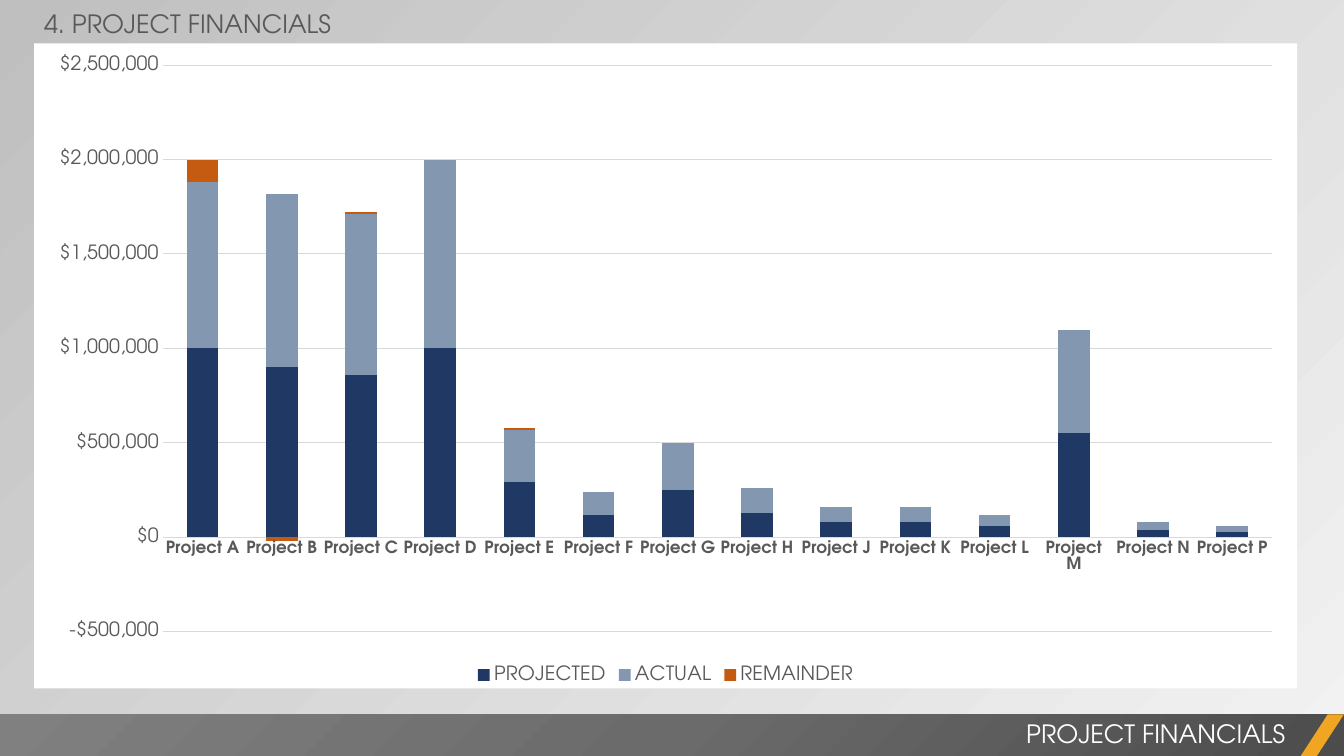
from dataclasses import dataclass

from lxml.etree import _Element as Node
from pptx import Presentation
from pptx.chart.chart import Chart
from pptx.chart.data import CategoryChartData as Data
from pptx.dml.color import RGBColor
from pptx.dml.fill import FillFormat as Fill
from pptx.enum.chart import XL_CHART_TYPE as Kind, XL_LEGEND_POSITION as Side
from pptx.enum.chart import XL_TICK_MARK as Tick
from pptx.enum.shapes import MSO_SHAPE as Form
from pptx.enum.text import MSO_AUTO_SIZE as Auto, PP_ALIGN as Align
from pptx.oxml import parse_xml as from_xml
from pptx.oxml.ns import nsdecls, qn
from pptx.shapes.autoshape import Shape
from pptx.slide import Slide
from pptx.text.text import Font
from pptx.util import Cm, Pt

FACE = "TeX Gyre Adventor"
GREY, RULE, WHITE = "595959", "D9D9D9", "FFFFFF"
WIDE, HIGH = 33.87, 19.05
BAR_TOP, BAR_HIGH = 18.0, 1.05
TIP = 1.09


@dataclass
class Label:
    text: str
    left: float
    top: float
    width: float
    hue: str
    align: Align
    wrap: bool


@dataclass
class Series:
    name: str
    hue: str
    costs: list[int]


LABELS = [
    Label("4. PROJECT FINANCIALS", 0.86, 0.08, 7.82, GREY, Align.LEFT, False),
    Label("PROJECT FINANCIALS", 13.34, 17.98, 19.3, WHITE, Align.RIGHT, True),
]
SMALL = [80, 80, 60, 550, 40, 30]
STACK = [
    Series("PROJECTED", "203864", [1000, 900, 860, 1000, 290, 120, 250, 130] + SMALL),
    Series("ACTUAL", "8497B0", [880, 920, 850, 1000, 280, 120, 250, 130] + SMALL),
    Series("REMAINDER", "C55A11", [120, -20, 10, 0, 10] + [0] * 9),
]


def paint(fill: Fill, hue: str) -> None:
    fill.solid()
    fill.fore_color.rgb = RGBColor.from_string(hue)


def style(font: Font, size: int, hue: str, bold: bool = False) -> None:
    font.name = FACE
    font.size = Pt(size)
    font.bold = bold
    font.color.rgb = RGBColor.from_string(hue)


def blend(fill: Fill, root: Node, stops: dict[int, str], course: str) -> None:
    fill.gradient()
    old = root.find(".//" + qn("a:gradFill"))
    marks = "".join(
        f'<a:gs pos="{spot * 1000}"><a:srgbClr val="{hue}"/></a:gs>'
        for spot, hue in stops.items()
    )
    new = from_xml(
        f'<a:gradFill {nsdecls("a")} rotWithShape="1">'
        f"<a:gsLst>{marks}</a:gsLst>{course}</a:gradFill>"
    )
    old.getparent().replace(old, new)


def add_form(slide: Slide, form: Form, left: float, width: float) -> Shape:
    shape = slide.shapes.add_shape(
        form, Cm(left), Cm(BAR_TOP), Cm(width), Cm(BAR_HIGH)
    )
    shape.shadow.inherit = False
    shape.line.fill.background()
    return shape


def add_label(slide: Slide, label: Label) -> None:
    box = slide.shapes.add_textbox(
        Cm(label.left), Cm(label.top), Cm(label.width), Cm(1.02)
    )
    frame = box.text_frame
    frame.text = label.text
    frame.word_wrap = label.wrap
    frame.auto_size = Auto.SHAPE_TO_FIT_TEXT
    line = frame.paragraphs[0]
    line.alignment = label.align
    style(line.runs[0].font, 18, label.hue)


def set_frame(chart: Chart) -> None:
    space = chart._chartSpace
    space.find(qn("c:txPr")).addprevious(from_xml(
        f'<c:spPr {nsdecls("c", "a")}><a:solidFill><a:srgbClr val="{WHITE}"/>'
        "</a:solidFill><a:ln><a:noFill/></a:ln></c:spPr>"
    ))
    plot = space.find(".//" + qn("c:plotArea"))
    for old in plot.findall(qn("c:layout")):
        plot.remove(old)
    sizes = {"x": 0.102, "y": 0.034, "w": 0.878, "h": 0.878}
    marks = "".join(f'<c:{key} val="{size}"/>' for key, size in sizes.items())
    plot.insert(0, from_xml(
        f'<c:layout {nsdecls("c")}><c:manualLayout><c:layoutTarget val="inner"/>'
        '<c:xMode val="edge"/><c:yMode val="edge"/>'
        f"{marks}</c:manualLayout></c:layout>"
    ))


def add_stack(slide: Slide) -> None:
    data = Data(number_format='"$"#,##0')
    data.categories = [f"Project {mark}" for mark in "ABCDEFGHJKLMNP"]
    for layer in STACK:
        data.add_series(layer.name, [cost * 1000 for cost in layer.costs])
    chart = slide.shapes.add_chart(
        Kind.COLUMN_STACKED, Cm(0.86), Cm(1.09), Cm(31.83), Cm(16.26), data
    ).chart
    style(chart.font, 14, "000000")
    chart.has_title = False
    chart.has_legend = True
    chart.legend.position = Side.BOTTOM
    chart.legend.include_in_layout = False
    style(chart.legend.font, 14, GREY)

    plot = chart.plots[0]
    plot.gap_width = 150
    plot.overlap = 100
    plot.vary_by_categories = False
    for bar, layer in zip(plot.series, STACK):
        bar.invert_if_negative = False
        paint(bar.format.fill, layer.hue)

    base, scale = chart.category_axis, chart.value_axis
    for axis in (base, scale):
        axis.major_tick_mark = axis.minor_tick_mark = Tick.NONE
    style(base.tick_labels.font, 12, GREY, True)
    style(scale.tick_labels.font, 14, GREY)
    scale.minimum_scale = -500000
    scale.maximum_scale = 2500000
    scale.major_unit = 500000
    scale.tick_labels.number_format = '"$"#,##0'
    scale.tick_labels.number_format_is_linked = False
    scale.format.line.fill.background()
    for line in (base.format.line, scale.major_gridlines.format.line):
        line.width = Pt(0.75)
        paint(line.fill, RULE)
    set_frame(chart)


def main() -> None:
    deck = Presentation()
    deck.slide_width, deck.slide_height = Cm(WIDE), Cm(HIGH)
    slide = deck.slides.add_slide(deck.slide_layouts[6])
    blend(
        slide.background.fill, slide._element, {0: "F2F2F2", 100: "BFBFBF"},
        '<a:lin ang="13500000" scaled="0"/>',
    )
    add_stack(slide)
    band = add_form(slide, Form.RECTANGLE, 0, WIDE)
    blend(
        band.fill, band._element, {0: "4C4C4C", 50: "6B6B6B", 100: "808080"},
        '<a:path path="circle"><a:fillToRect l="100000" t="100000"/></a:path>',
    )
    for label in LABELS:
        add_label(slide, label)
    slant = add_form(slide, Form.PARALLELOGRAM, WIDE - TIP, TIP)
    slant.adjustments[0] = 0.65
    paint(slant.fill, "F0A622")
    deck.save("out.pptx")


if __name__ == "__main__":
    main()
